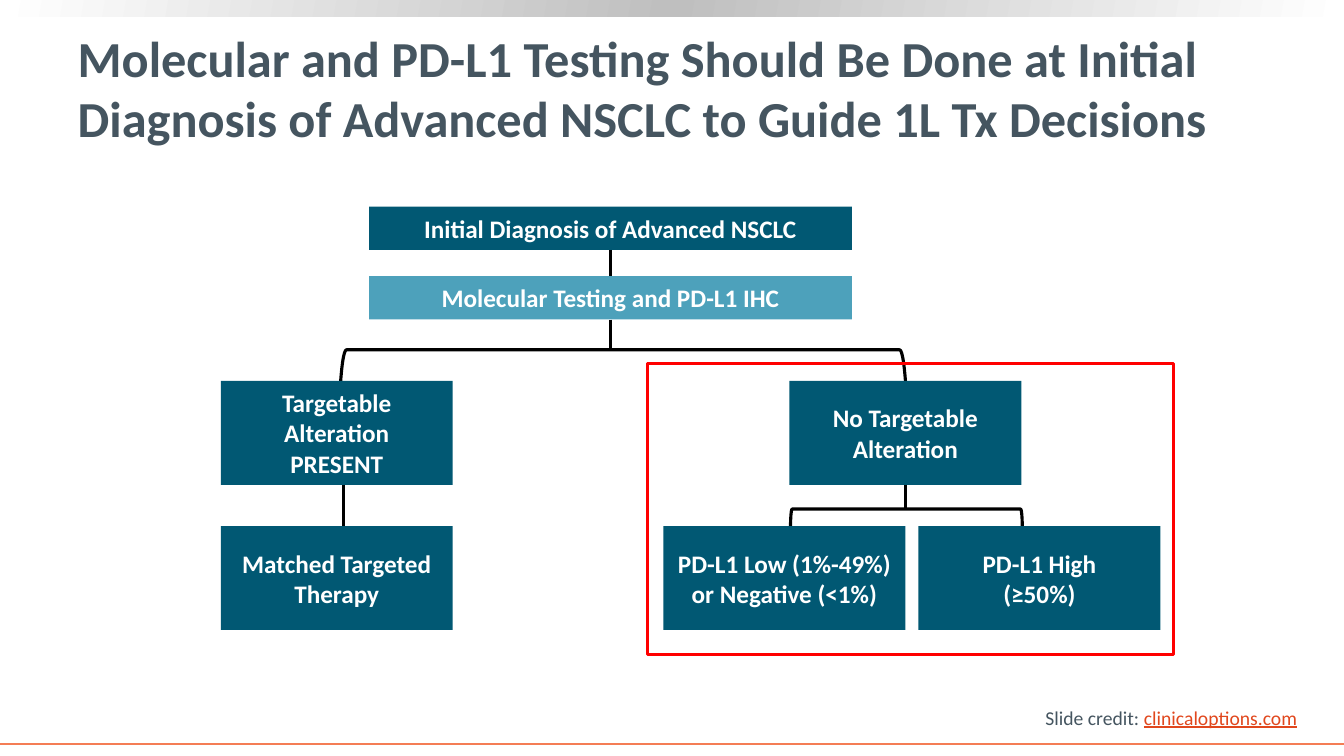
from dataclasses import dataclass

from lxml import etree
from pptx import Presentation
from pptx import oxml
from pptx.dml.color import RGBColor
from pptx.enum import shapes as kinds, text as txt
from pptx.oxml.ns import nsdecls, qn
from pptx.util import Inches, Pt

# Content
TITLE = ("Molecular and PD-L1 Testing Should Be Done at Initial "
         "Diagnosis of Advanced NSCLC to Guide 1L Tx Decisions")
CREDIT = ("Slide credit: ", "clinicaloptions.com")
STEPS = {
    "diagnosis": ["Initial Diagnosis of Advanced NSCLC"],
    "testing": ["Molecular Testing and PD-L1 IHC"],
    "present": ["Targetable Alteration", "PRESENT"],
    "absent": ["No Targetable Alteration"],
    "matched": ["Matched Targeted Therapy"],
    "low": ["PD-L1 Low (1%-49%)", "or Negative (<1%)"],
    "high": ["PD-L1 High", "(≥50%)"],
}


@dataclass(frozen=True)
class Theme:
    font: str = "Calibri"
    heading: str = "455560"
    step: str = "015873"
    test: str = "4DA1BB"
    step_text: str = "FFFFFF"
    rule: str = "000000"
    focus: str = "FF0000"
    link: str = "E1471D"
    footer: str = "F47D55"
    band_edge: str = "FFFFFF"
    band_middle: str = "BFBFBF"
    title_size: float = 36
    step_size: float = 18
    credit_size: float = 14
    line: float = 2.25
    footer_line: float = 1.5


THEME = Theme()

# Layout: each row has a top and height, each step a left and width
SLIDE_W, SLIDE_H = 13.33, 7.5
ROWS = [(2.05, 0.43), (2.74, 0.43), (3.78, 1.03), (5.22, 1.03)]
PLACES = {
    "diagnosis": (0, 3.66, 4.79),
    "testing": (1, 3.66, 4.79),
    "present": (2, 2.19, 2.3),
    "absent": (2, 7.83, 2.3),
    "matched": (3, 2.19, 2.3),
    "low": (3, 6.58, 2.4),
    "high": (3, 9.11, 2.4),
}
# Branches: left, top, span, drop
TARGET_BRANCH = (3.36, 3.47, 5.64, 0.92)
PDL1_BRANCH = (7.84, 5.05, 2.3, 0.2)
FOCUS_FRAME = (6.42, 3.61, 5.22, 2.88)

deck = Presentation()
deck.slide_width, deck.slide_height = Inches(SLIDE_W), Inches(SLIDE_H)
slide = deck.slides.add_slide(deck.slide_layouts[5])


def rgb(value):
    return RGBColor.from_string(value)


def add_run(paragraph, words, size, color, bold=False, underline=None):
    run = paragraph.add_run()
    run.text = words
    font = run.font
    font.name, font.size, font.bold = THEME.font, Pt(size), bold
    font.underline = underline
    font.color.rgb = rgb(color)


def add_shape(kind, place, fill=None, line=None):
    shape = slide.shapes.add_shape(kind, *map(Inches, place))
    shape.shadow.inherit = False
    if fill:
        shape.fill.solid()
        shape.fill.fore_color.rgb = rgb(fill)
    else:
        shape.fill.background()
    if line:
        shape.line.color.rgb = rgb(line)
        shape.line.width = Pt(THEME.line)
    else:
        shape.line.fill.background()
    return shape


def add_line(start, end, color=THEME.rule, width=THEME.line):
    line = slide.shapes.add_connector(
        kinds.MSO_CONNECTOR.STRAIGHT, *map(Inches, (*start, *end)))
    line.line.color.rgb = rgb(color)
    line.line.width = Pt(width)
    etree.SubElement(line._element.spPr, qn("a:effectLst"))
    return line


def add_branch(left, top, span, drop):
    """A right bracket turned so that its spine lies on top."""
    place = (left + (span - drop) / 2, top + (drop - span) / 2, drop, span)
    add_shape(kinds.MSO_SHAPE.RIGHT_BRACKET, place, line=THEME.rule).rotation = 270


def add_step(name):
    row, left, width = PLACES[name]
    top, height = ROWS[row]
    fill = THEME.test if name == "testing" else THEME.step
    step = add_shape(kinds.MSO_SHAPE.RECTANGLE, (left, top, width, height), fill)
    frame = step.text_frame
    frame.word_wrap = True
    frame.vertical_anchor = txt.MSO_ANCHOR.MIDDLE
    for i, words in enumerate(STEPS[name]):
        paragraph = frame.add_paragraph() if i else frame.paragraphs[0]
        paragraph.alignment = txt.PP_ALIGN.CENTER
        add_run(paragraph, words, THEME.step_size, THEME.step_text, bold=True)
    return step


def add_stem(step, bottom):
    """A line from the bottom middle of a step down to a branch."""
    middle = (step.left + step.width / 2) / Inches(1)
    line = add_line((middle, (step.top + step.height) / Inches(1)), (middle, bottom))
    line.begin_connect(step, 2)
    return line


# Top band and footer rule
band = add_shape(kinds.MSO_SHAPE.RECTANGLE, (0, 0, SLIDE_W, 0.16), THEME.band_middle)
stops = "".join(
    f'<a:gs pos="{pos}"><a:srgbClr val="{color}"/></a:gs>'
    for pos, color in ((0, THEME.band_edge), (50000, THEME.band_middle),
                       (100000, THEME.band_edge)))
gradient = oxml.parse_xml(
    f'<a:gradFill {nsdecls("a")} rotWithShape="1"><a:gsLst>{stops}</a:gsLst>'
    f'<a:lin ang="{190 * 60000}" scaled="0"/></a:gradFill>')
band_props = band._element.spPr
band_props.replace(band_props.find(qn("a:solidFill")), gradient)
add_line((0, 7.38), (SLIDE_W, 7.38), THEME.footer, THEME.footer_line)

# Title
title = slide.shapes.title
title.left, title.top, title.width, title.height = map(Inches, (0.67, 0.26, 11.89, 1.21))
title.text_frame.auto_size = txt.MSO_AUTO_SIZE.NONE
title.text_frame.word_wrap = True
title.text_frame.vertical_anchor = txt.MSO_ANCHOR.MIDDLE
title_line = title.text_frame.paragraphs[0]
title_line.alignment = txt.PP_ALIGN.LEFT
add_run(title_line, TITLE, THEME.title_size, THEME.heading, bold=True)

# Branches, steps and the lines between them
add_branch(*TARGET_BRANCH)
add_branch(*PDL1_BRANCH)
steps = {name: add_step(name) for name in STEPS}
add_stem(steps["diagnosis"], ROWS[1][0]).end_connect(steps["testing"], 0)
add_stem(steps["testing"], TARGET_BRANCH[1])
add_stem(steps["absent"], PDL1_BRANCH[1])
add_line((3.41, sum(ROWS[2])), (3.41, ROWS[3][0]))

# Frame around the patients without a target
add_shape(kinds.MSO_SHAPE.RECTANGLE, FOCUS_FRAME, line=THEME.focus)

# Credit
credit = slide.shapes.add_textbox(*map(Inches, (10.27, 6.95, 2.72, 0.34))).text_frame
credit.word_wrap = False
credit.auto_size = txt.MSO_AUTO_SIZE.SHAPE_TO_FIT_TEXT
label, site = CREDIT
add_run(credit.paragraphs[0], label, THEME.credit_size, THEME.heading)
add_run(credit.paragraphs[0], site, THEME.credit_size, THEME.link, underline=True)

deck.save("out.pptx")
